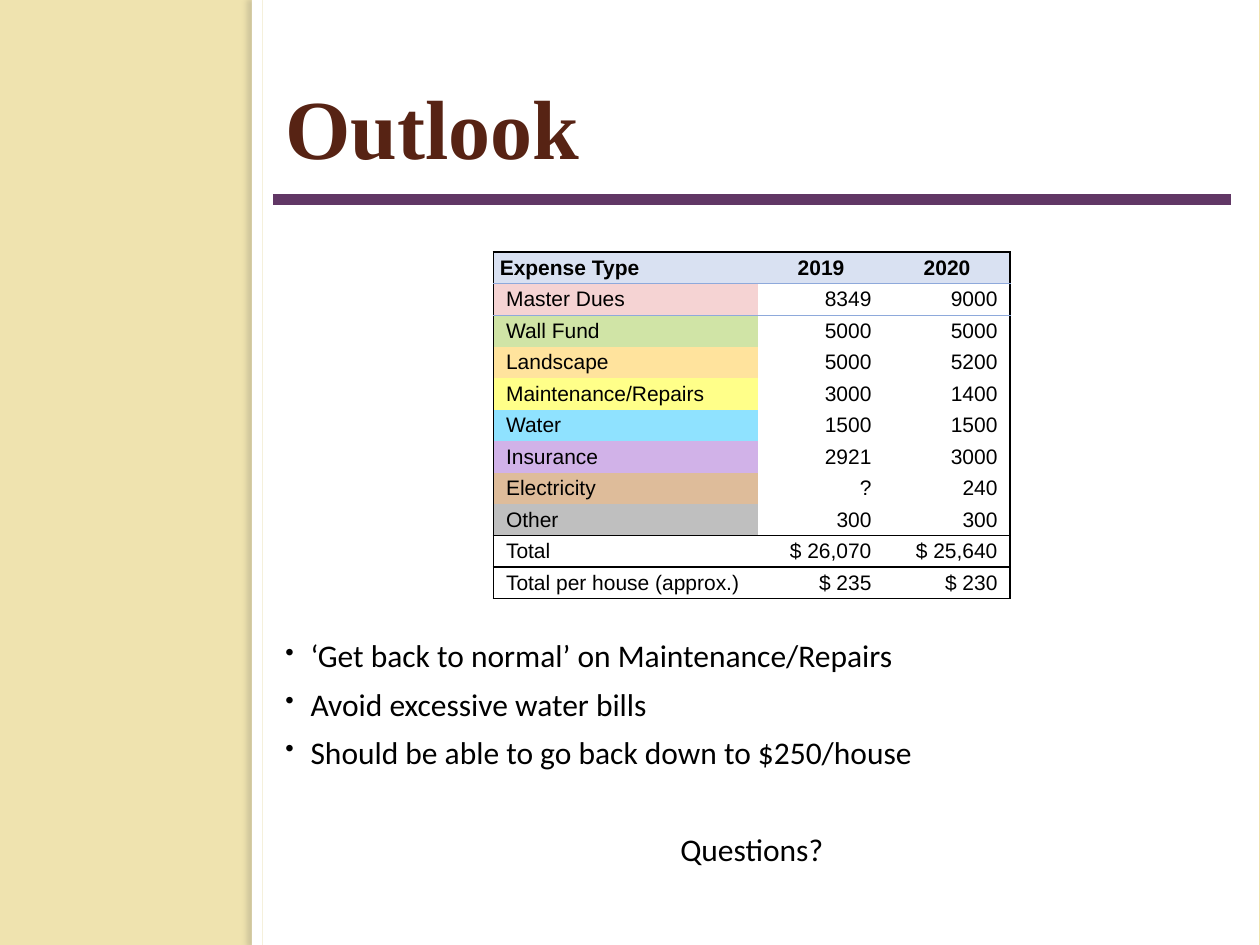
"""Build the Outlook slide with its expense table and closing points."""
from dataclasses import dataclass
from typing import NamedTuple, Optional

import lxml.etree
import pptx
import pptx.dml.color
import pptx.enum.dml
import pptx.enum.shapes
import pptx.enum.text
import pptx.oxml
import pptx.oxml.ns
import pptx.util

COLS, ROWS = 120, 90
ALIGN = pptx.enum.text.PP_ALIGN
ANCHOR = pptx.enum.text.MSO_ANCHOR
NO_GRID_STYLE = "{2D5ABB26-0587-4C30-8999-92F81FD0307C}"


@dataclass(frozen=True)
class Theme:
    sand: str = "EFE3AF"
    white: str = "FFFFFF"
    black: str = "000000"
    brown: str = "572314"
    plum: str = "613765"
    shadow: str = "736F63"
    header: str = "D9E1F2"
    header_line: str = "8EA9DB"
    title_font: str = "Times New Roman"
    table_font: str = "Arial"
    body_font: str = "Calibri"
    title_size: float = 48
    table_size: float = 12
    body_size: float = 18


class Box(NamedTuple):
    left: float
    top: float
    width: float
    height: float


class Expense(NamedTuple):
    label: str
    y2019: str
    y2020: str
    fill: Optional[str] = None


T = Theme()
TITLE = Box(26, 6, 91.2, 12)
PANEL = Box(25, 0, 94.9, ROWS)
EDGE = Box(24, 0, 1, ROWS)
RULE = Box(26, 19, 91.2, 0)
TABLE = Box(47, 24, 49.2, 33)
BODY = Box(26, 60, 91.2, 20)
TABLE_COLS = (25.2, 12, 12)
EXPENSES = (
    Expense("Expense Type", "2019", "2020", T.header),
    Expense("Master Dues", "8349", "9000", "F5D3D3"),
    Expense("Wall Fund", "5000", "5000", "D0E4A6"),
    Expense("Landscape", "5000", "5200", "FFE39D"),
    Expense("Maintenance/Repairs", "3000", "1400", "FFFF89"),
    Expense("Water", "1500", "1500", "8FE2FF"),
    Expense("Insurance", "2921", "3000", "D1B2E8"),
    Expense("Electricity", "?", "240", "DEBC9A"),
    Expense("Other", "300", "300", "BFBFBF"),
    Expense("Total", "$ 26,070", "$ 25,640"),
    Expense("Total per house (approx.)", "$ 235", "$ 230"),
)
LAST_ITEM, LAST_ROW = 8, len(EXPENSES) - 1
POINTS = (
    "‘Get back to normal’ on Maintenance/Repairs",
    "Avoid excessive water bills",
    "Should be able to go back down to $250/house",
)


def rgb(color: str):
    return pptx.dml.color.RGBColor.from_string(color)


def place(prs, box: Box) -> tuple:
    x, y = prs.slide_width / COLS, prs.slide_height / ROWS
    return tuple(round(n * unit) for n, unit in zip(box, (x, y, x, y)))


def xml(text: str):
    return pptx.oxml.parse_xml(text.replace(" ", f" {pptx.oxml.ns.nsdecls('a')} ", 1))


def write(p, text: str, *, font: str, size: float, color: str = T.black, bold: bool = False,
          align=ALIGN.LEFT, before: float = 0, bullet: bool = False) -> None:
    if bullet:
        pPr = p._p.get_or_add_pPr()
        pPr.set("marL", str(pptx.util.Inches(0.2)))
        pPr.set("indent", str(-pptx.util.Inches(0.2)))
        pPr.append(xml('<a:buSzPct val="80000"/>'))
        pPr.append(xml('<a:buChar char="•"/>'))
    p.alignment = align
    p.space_before = pptx.util.Pt(before)
    r = p.add_run()
    r.text = text
    r.font.name, r.font.size, r.font.bold = font, pptx.util.Pt(size), bold
    r.font.color.rgb = rgb(color)


def add_panel(prs, s, box: Box, shadow: bool = False) -> None:
    sp = s.shapes.add_shape(pptx.enum.shapes.MSO_SHAPE.RECTANGLE, *place(prs, box))
    sp.shadow.inherit = False
    sp.fill.solid()
    sp.fill.fore_color.rgb = rgb(T.white)
    sp.line.fill.background()
    if shadow:
        effects = sp.element.spPr.find(pptx.oxml.ns.qn("a:effectLst"))
        effects.append(xml(
            '<a:outerShdw blurRad="38100" dist="38100" dir="10800000" rotWithShape="0">'
            f'<a:srgbClr val="{T.shadow}"><a:alpha val="25000"/></a:srgbClr></a:outerShdw>'))


def add_rule(prs, s, box: Box) -> None:
    x, y, width, height = place(prs, box)
    line = s.shapes.add_connector(
        pptx.enum.shapes.MSO_CONNECTOR.STRAIGHT, x, y, x + width, y + height)
    line.line.color.rgb = rgb(T.plum)
    line.line.width = pptx.util.Pt(6)
    lxml.etree.SubElement(line.element.spPr, pptx.oxml.ns.qn("a:effectLst"))


def border_cell(cell, row: int, col: int) -> None:
    outer, inner = (T.black, 1), (T.header_line, 0.5)
    tops = {0: outer, 1: inner, LAST_ITEM + 1: outer}
    bottoms = {0: inner, LAST_ITEM: outer, LAST_ROW: outer}
    sides = (("lnL", outer if col == 0 else None), ("lnR", outer if col == 2 else None),
             ("lnT", tops.get(row)), ("lnB", bottoms.get(row)))
    tcPr = cell._tc.get_or_add_tcPr()
    for i, (tag, (color, width)) in enumerate((k, v) for k, v in sides if v):
        tcPr.insert(i, xml(
            f'<a:{tag} w="{pptx.util.Pt(width)}"><a:solidFill><a:srgbClr val="{color}"/>'
            f'</a:solidFill></a:{tag}>'))


def fill_cell(cell, text: str, row: int, col: int, fill: Optional[str]) -> None:
    header = row == 0
    cell.vertical_anchor = ANCHOR.MIDDLE
    cell.margin_top = cell.margin_bottom = 0
    cell.margin_left = pptx.util.Inches((0.05 if header else 0.1) if col == 0 else 0)
    cell.margin_right = pptx.util.Inches(0.1 if col and not header else 0)
    align = ALIGN.LEFT if col == 0 else ALIGN.CENTER if header else ALIGN.RIGHT
    write(cell.text_frame.paragraphs[0], text, font=T.table_font, size=T.table_size,
          bold=header, align=align)
    if fill and (header or col == 0):
        cell.fill.solid()
        cell.fill.fore_color.rgb = rgb(fill)
    else:
        cell.fill.background()
    border_cell(cell, row, col)


def add_expenses(prs, s) -> None:
    frame = s.shapes.add_table(len(EXPENSES), len(TABLE_COLS), *place(prs, TABLE))
    table = frame.table
    table.first_row = table.horz_banding = False
    frame.element.find(".//" + pptx.oxml.ns.qn("a:tableStyleId")).text = NO_GRID_STYLE
    for column, width in zip(table.columns, TABLE_COLS):
        column.width = round(width * prs.slide_width / COLS)
    for row, expense in enumerate(EXPENSES):
        for col, text in enumerate(expense[:3]):
            fill_cell(table.cell(row, col), text, row, col, expense.fill)


def add_title(prs, s) -> None:
    sp = s.shapes.title
    s.shapes.element.append(sp.element)
    sp.left, sp.top, sp.width, sp.height = place(prs, TITLE)
    tf = sp.text_frame
    tf.auto_size = pptx.enum.text.MSO_AUTO_SIZE.NONE
    tf.vertical_anchor = ANCHOR.MIDDLE
    write(tf.paragraphs[0], "Outlook", font=T.title_font, size=T.title_size,
          color=T.brown, bold=True)


def add_points(prs, s) -> None:
    tf = s.shapes.add_textbox(*place(prs, BODY)).text_frame
    tf.word_wrap = True
    style = dict(font=T.body_font, size=T.body_size)
    for i, point in enumerate(POINTS):
        p = tf.add_paragraph() if i else tf.paragraphs[0]
        write(p, point, before=6 if i else 0, bullet=True, **style)
    write(tf.add_paragraph(), "Questions?", before=34, align=ALIGN.CENTER, **style)


def main() -> None:
    prs = pptx.Presentation()
    prs.slide_width, prs.slide_height = pptx.util.Inches(10), pptx.util.Inches(7.5)
    s = prs.slides.add_slide(prs.slide_layouts[5])
    s.background.fill.solid()
    s.background.fill.fore_color.rgb = rgb(T.sand)
    add_panel(prs, s, PANEL)
    add_panel(prs, s, EDGE, shadow=True)
    add_rule(prs, s, RULE)
    add_title(prs, s)
    add_expenses(prs, s)
    add_points(prs, s)
    prs.save("out.pptx")


if __name__ == "__main__":
    main()
